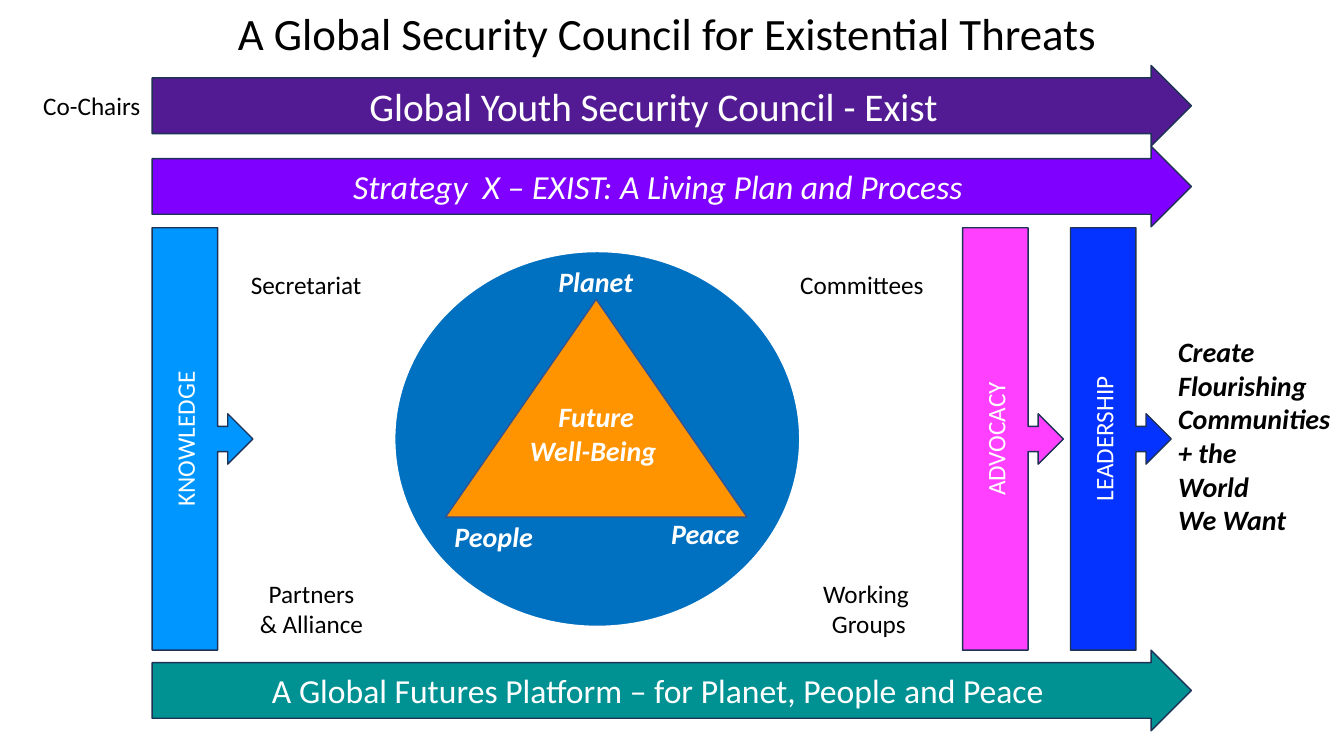
import pptx
import pptx.util
import pptx.dml.color
import pptx.enum.shapes
import pptx.enum.text

SHAPE = pptx.enum.shapes.MSO_SHAPE
ALIGN = pptx.enum.text.PP_ALIGN
ANCHOR = pptx.enum.text.MSO_ANCHOR

# Grid of 160 columns by 90 rows, twelve cells to the inch
COLS, ROWS, CELL = 160, 90, 1 / 12
LEFT = 18.12
FLOW_WIDTH, FLOW_HEIGHT = 123.72, 9.6
PILLAR_TOP, PILLAR_WIDTH, PILLAR_HEIGHT = 27.12, 12, 50.28
OUTLINE = "1E3256"
WHITE, BLACK = "FFFFFF", "000000"


def grid(*cells):
    return [pptx.util.Inches(n * CELL) for n in cells]


def color(hex_text):
    return pptx.dml.color.RGBColor.from_string(hex_text)


def write(tf, text, size=18, fill=BLACK, bold=False, italic=False,
          align=ALIGN.LEFT, anchor=ANCHOR.TOP, wrap=False):
    """Fill a text frame, one paragraph per line of text."""
    tf.auto_size = pptx.enum.text.MSO_AUTO_SIZE.NONE
    tf.word_wrap = wrap
    tf.vertical_anchor = anchor
    for i, line in enumerate(text.split("\n")):
        p = tf.paragraphs[0] if i == 0 else tf.add_paragraph()
        p.alignment = align
        r = p.add_run()
        r.text = line
        r.font.name = "Calibri"
        r.font.size = pptx.util.Pt(size)
        r.font.bold = bold
        r.font.italic = italic
        r.font.color.rgb = color(fill)


def add_label(s, text, box, **style):
    sp = s.shapes.add_textbox(*grid(*box))
    write(sp.text_frame, text, **style)


def add_block(s, kind, box, fill, line=OUTLINE, weight=1, text="", **style):
    sp = s.shapes.add_shape(kind, *grid(*box))
    sp.shadow.inherit = False
    sp.fill.solid()
    sp.fill.fore_color.rgb = color(fill)
    sp.line.color.rgb = color(line)
    sp.line.width = pptx.util.Pt(weight)
    if text:
        write(sp.text_frame, text, fill=WHITE, align=ALIGN.CENTER,
              anchor=ANCHOR.MIDDLE, wrap=True, **style)
    return sp


def add_flow(s, top, fill, text, **style):
    """Long horizontal arrow."""
    sp = add_block(s, SHAPE.RIGHT_ARROW, (LEFT, top, FLOW_WIDTH, FLOW_HEIGHT),
                   fill, text=text, **style)
    sp.adjustments[0] = 0.69
    sp.adjustments[1] = 0.5


def add_pillar(s, left, fill, text):
    """Upright callout with its label turned to read upwards."""
    box = (left, PILLAR_TOP, PILLAR_WIDTH, PILLAR_HEIGHT)
    sp = add_block(s, SHAPE.RIGHT_ARROW_CALLOUT, box, fill, text=text)
    sp.element.txBody.bodyPr.set("vert", "vert270")


def add_title(s, text):
    sp = s.shapes.title
    sp.left, sp.top, sp.width, sp.height = grid(LEFT + 9, 0.12, 105.72, 7.68)
    write(sp.text_frame, text, size=32)


def add_core(s):
    """Triangle of well-being inside the globe."""
    add_block(s, SHAPE.OVAL, (46.2, 29.16, 49.8, 46.2), "0070C0",
              line=WHITE, weight=10.5)
    sp = add_block(s, SHAPE.ISOSCELES_TRIANGLE, (53.04, 35.64, 35.88, 25.92),
                   "FF9300", line="325491", text="Future\nWell-Being ",
                   size=20, bold=True, italic=True)
    tf = sp.text_frame
    tf.margin_left = tf.margin_right = tf.margin_top = 0
    tf.margin_bottom = pptx.util.Inches(0.58)
    for text, left, top, width in (("Planet", 65.28, 30.96, 11.4),
                                   ("Peace", 78.72, 60.96, 10.56),
                                   ("People", 52.92, 61.2, 11.88)):
        add_label(s, text, (left, top, width, 5.28), size=20, fill=WHITE,
                  bold=True, italic=True)


def main():
    prs = pptx.Presentation()
    prs.slide_width, prs.slide_height = grid(COLS, ROWS)
    s = prs.slides.add_slide(prs.slide_layouts.get_by_name("Title Only"))
    add_title(s, "A Global Security Council for Existential Threats")

    # Horizontal flows
    add_flow(s, 17.4, "8000FF",
             "Strategy  X – EXIST: A Living Plan and Process",
             size=24, italic=True)
    add_flow(s, 7.8, "521B93", "Global Youth Security Council - Exist ",
             size=28)
    add_flow(s, 77.4, "009193",
             "A Global Futures Platform – for Planet, People and Peace",
             size=24)

    # Centre
    add_core(s)

    # Pillars
    for left, fill, text in ((LEFT, "0096FF", "KNOWLEDGE"),
                             (114.6, "FF40FF", "ADVOCACY"),
                             (127.44, "0432FF", "LEADERSHIP")):
        add_pillar(s, left, fill, text)

    # Bodies around the centre
    add_label(s, "Co-Chairs", (3.96, 10.2, 14.16, 4.8))
    add_label(s, "Secretariat", (28.68, 31.44, 15.72, 4.8))
    add_label(s, "Committees", (94.08, 31.44, 17.28, 4.8))
    add_label(s, "Partners\n& Alliance", (29.64, 68.28, 14.88, 8.52),
              align=ALIGN.CENTER)
    add_label(s, "Working \nGroups", (96.72, 68.28, 13.44, 8.52),
              align=ALIGN.CENTER)

    # Outcome
    add_label(s, "Create\nFlourishing\nCommunities\n+ the\nWorld\nWe Want",
              (139.08, 39.24, 21, 25.44), size=20, bold=True, italic=True)

    prs.save("out.pptx")


if __name__ == "__main__":
    main()
